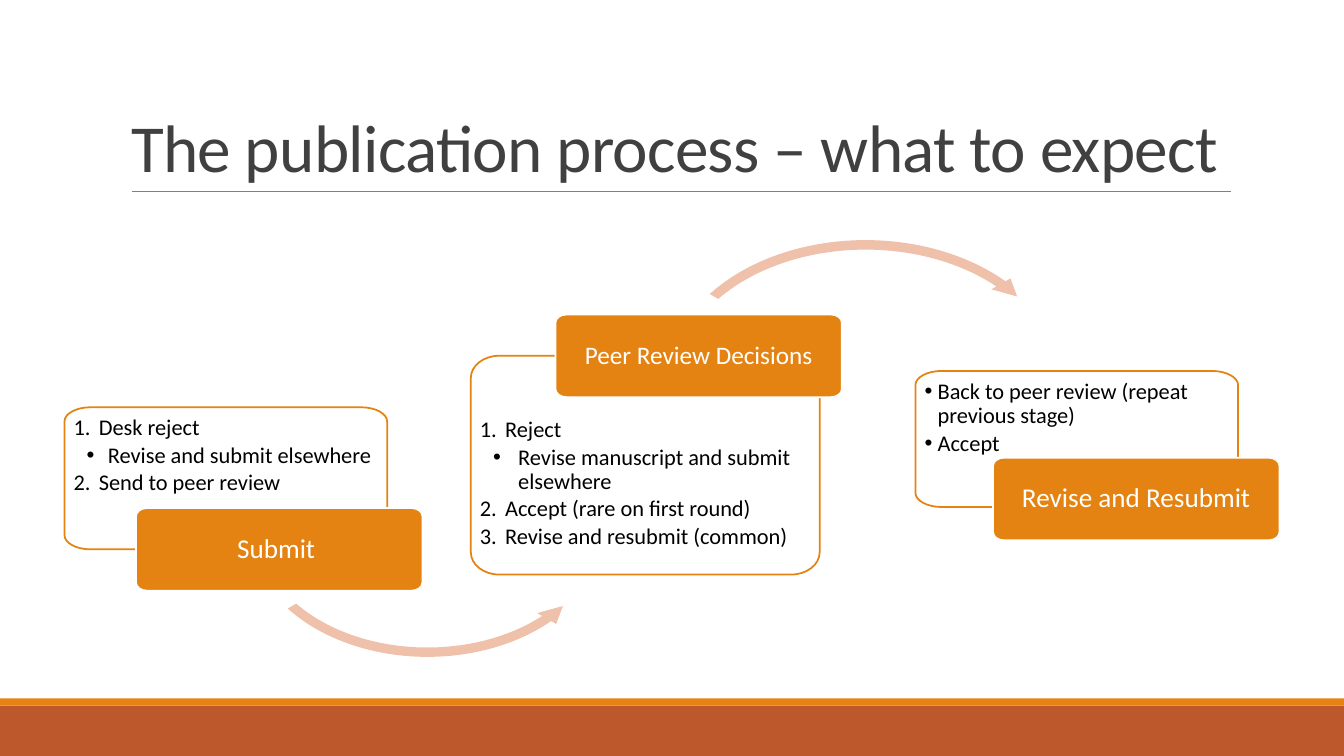
from dataclasses import dataclass
from typing import Optional

from lxml import etree
from pptx import Presentation
from pptx import util as u
from pptx.dml.color import RGBColor
from pptx.enum import shapes, text
from pptx.oxml.ns import qn

HUES = {
    "rust": "BD582C", "amber": "E48312", "peach": "EFC1AB", "grey": "808080",
    "dark": "404040", "black": "000000", "white": "FFFFFF",
}
KIND = shapes.MSO_SHAPE
ALIGN = text.PP_ALIGN
ANCHOR = text.MSO_ANCHOR


@dataclass
class Item:
    words: str
    mark: str = "1."
    level: int = 1
    left: float = 0.25
    hang: float = 0.25


@dataclass
class Arrow:
    kind: KIND
    box: tuple
    bends: tuple


@dataclass
class Stage:
    card: tuple
    curve: tuple
    pads: tuple
    items: list
    label: tuple
    name: str
    size: float
    arrow: Optional[Arrow] = None


LOW = (0.09, 0.09, 0.09, 0.62)
HIGH = (0.09, 0.62, 0.09, 0.09)
STAGES = [
    Stage((0.64, 4.04, 3.2, 1.41), (0.26, 0.14), LOW,
          [Item("Desk reject"),
           Item("Revise and submit elsewhere", "•", 2, 0.34, 0.21),
           Item("Send to peer review")],
          (1.35, 5.04), "Submit ", 19.4,
          Arrow(KIND.LEFT_CIRCULAR_ARROW, (2.41, 3.92, 3.66, 2.66),
                (0.035, 4.365, 22.12, 90.245, 0.041))),
    Stage((4.67, 3.53, 3.46, 2.17), (0.28, 0.22), HIGH,
          [Item("Reject"),
           Item("Revise manuscript and submit elsewhere", "•", 2, 0.38),
           Item("Accept (rare on first round)"),
           Item("Revise and resubmit (common)")],
          (5.51, 3.12), "Peer Review Decisions", 18,
          Arrow(KIND.CIRCULAR_ARROW, (6.55, 2.32, 4.07, 2.95),
                (0.032, 3.894, 194.351, 125.755, 0.037))),
    Stage((9.08, 3.68, 3.2, 1.35), (0.26, 0.14), LOW,
          [Item("Back to peer review (repeat previous stage)", "•", 1, 0.13, 0.13),
           Item("Accept", "•", 1, 0.13, 0.13)],
          (9.85, 4.54), "Revise and Resubmit", 19.4),
]


def hue(name: str) -> RGBColor:
    return RGBColor.from_string(HUES[name])


def paint(shape, fill: str, line: Optional[str] = None) -> None:
    shape.shadow.inherit = False
    shape.fill.solid()
    shape.fill.fore_color.rgb = hue(fill)
    if line:
        shape.line.color.rgb = hue(line)
        shape.line.width = u.Pt(1.25)
    else:
        shape.line.fill.background()


def preset(slide, kind: KIND, box: tuple, fill: str):
    shape = slide.shapes.add_shape(kind, *map(u.Inches, box))
    paint(shape, fill)
    return shape


def panel(slide, box: tuple, curve: tuple, fill: str, line: str):
    x, y, w, h = box
    rx, ry = curve
    pull = 0.45
    corners = [(x, y, 0, ry, rx, 0), (x + w, y, -rx, 0, 0, ry),
               (x + w, y + h, 0, -ry, -rx, 0), (x, y + h, rx, 0, 0, -ry)]
    dots = []
    for cx, cy, ax, ay, bx, by in corners:
        dots += [(cx + ax, cy + ay), (cx + pull * ax, cy + pull * ay),
                 (cx + pull * bx, cy + pull * by), (cx + bx, cy + by)]
    dots = [(u.Inches(dx), u.Inches(dy)) for dx, dy in dots]
    pen = slide.shapes.build_freeform(*dots[0])
    pen.add_line_segments(dots[1:] + dots[:1], close=True)
    shape = pen.convert_to_shape()
    sides = list(shape._element.spPr.iter(qn("a:lnTo")))
    for first in range(0, len(sides), 4):
        bend = etree.Element(qn("a:cubicBezTo"))
        sides[first].addprevious(bend)
        for side in sides[first:first + 3]:
            bend.append(side[0])
            side.getparent().remove(side)
    paint(shape, fill, line)
    return shape


def setup(frame, pads: tuple, anchor: ANCHOR) -> None:
    frame.word_wrap = True
    frame.auto_size = text.MSO_AUTO_SIZE.NONE
    frame.vertical_anchor = anchor
    (frame.margin_left, frame.margin_top,
     frame.margin_right, frame.margin_bottom) = map(u.Inches, pads)


def write(para, words: str, *, size: float, color: str, align: ALIGN = ALIGN.LEFT,
          lead: float = 0.9, after: int = 0, track: int = 0) -> None:
    para.alignment = align
    para.line_spacing = lead
    if after:
        gap = etree.SubElement(para._p.get_or_add_pPr(), qn("a:spcAft"))
        etree.SubElement(gap, qn("a:spcPct"), val=str(after * 1000))
    run = para.add_run()
    run.text = words
    run.font.size = u.Pt(size)
    run.font.name = "Calibri"
    run.font.color.rgb = hue(color)
    if track:
        run._r.get_or_add_rPr().set("spc", str(track))


def bullet(para, item: Item) -> None:
    para.level = item.level
    props = para._p.get_or_add_pPr()
    props.set("marL", str(u.Inches(item.left)))
    props.set("indent", str(-u.Inches(item.hang)))
    if item.mark == "1.":
        etree.SubElement(props, qn("a:buFont"), typeface="+mj-lt")
        etree.SubElement(props, qn("a:buAutoNum"), type="arabicPeriod")
    else:
        etree.SubElement(props, qn("a:buFont"), typeface="Arial")
        etree.SubElement(props, qn("a:buChar"), char=item.mark)


def draw(slide, stage: Stage) -> None:
    card = panel(slide, stage.card, stage.curve, "white", "amber")
    shade = card._element.spPr.find(".//" + qn("a:srgbClr"))
    etree.SubElement(shade, qn("a:alpha"), val="90000")
    frame = card.text_frame
    setup(frame, stage.pads, ANCHOR.TOP)
    for rank, item in enumerate(stage.items):
        para = frame.add_paragraph() if rank else frame.paragraphs[0]
        write(para, item.words, size=16, color="black", after=15)
        bullet(para, item)
    if stage.arrow:
        arrow = preset(slide, stage.arrow.kind, stage.arrow.box, "peach")
        for rank, bend in enumerate(stage.arrow.bends):
            arrow.adjustments[rank] = bend
    label = panel(slide, (*stage.label, 2.84, 0.82), (0.11, 0.08), "amber", "white")
    setup(label.text_frame, (0.09, 0.07, 0.09, 0.07), ANCHOR.MIDDLE)
    write(label.text_frame.paragraphs[0], stage.name, size=stage.size,
          color="white", align=ALIGN.CENTER, after=35)


def main() -> None:
    deck = Presentation()
    deck.slide_width, deck.slide_height = u.Inches(13.33), u.Inches(7.5)
    slide = deck.slides.add_slide(deck.slide_layouts[5])

    preset(slide, KIND.RECTANGLE, (0, 7, 13.33, 0.5), "rust")
    preset(slide, KIND.RECTANGLE, (0, 6.93, 13.33, 0.07), "amber")
    rule = slide.shapes.add_connector(
        shapes.MSO_CONNECTOR.STRAIGHT, *map(u.Inches, (1.31, 1.9, 12.21, 1.9)))
    rule.line.color.rgb = hue("grey")
    rule.line.width = u.Pt(0.5)
    etree.SubElement(rule._element.spPr, qn("a:effectLst"))

    title = slide.shapes.title
    title.left, title.top, title.width, title.height = map(
        u.Inches, (1.2, 0.31, 11, 1.59))
    setup(title.text_frame, (0.1, 0.05, 0.1, 0.05), ANCHOR.BOTTOM)
    write(title.text_frame.paragraphs[0], "The publication process – what to expect",
          size=48, color="dark", lead=0.85, track=-50)

    for stage in STAGES:
        draw(slide, stage)
    deck.save("out.pptx")


if __name__ == "__main__":
    main()
